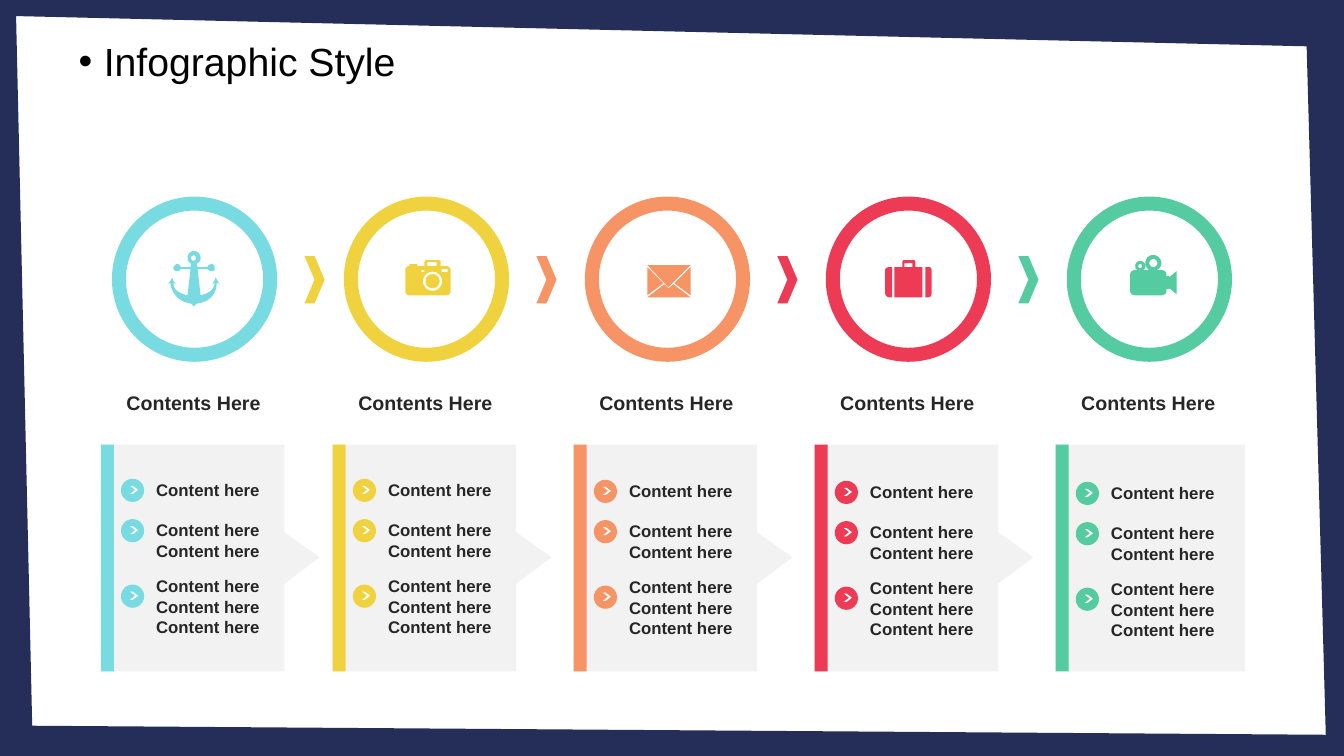
from math import cos, pi, sin

from lxml import etree
from pptx import Presentation
from pptx.dml.color import RGBColor
from pptx.enum.shapes import MSO_SHAPE
from pptx.enum.text import MSO_ANCHOR, MSO_AUTO_SIZE, PP_ALIGN
from pptx.oxml.ns import qn
from pptx.util import Inches, Pt

OVAL, RECT, ARROW = MSO_SHAPE.OVAL, MSO_SHAPE.RECTANGLE, MSO_SHAPE.CHEVRON
LEFT, CENTER, MIDDLE = PP_ALIGN.LEFT, PP_ALIGN.CENTER, MSO_ANCHOR.MIDDLE
FIT, FIXED = MSO_AUTO_SIZE.SHAPE_TO_FIT_TEXT, MSO_AUTO_SIZE.NONE

FONT, INK, PALE, WHITE, NAVY = "Arial", "262626", "F2F2F2", "FFFFFF", "252E58"
NEEDS = {"M": 2, "L": 2, "C": 6, "O": 3}

FRAME = "M 0 0 L 1333 0 1333 750 0 750 M 16 16 L 32 720 1315 729 1296 46"
PANEL = "M 0 0 L 182 0 182 87 217 112 182 138 182 225 0 225"
ANCHOR = """O 26 7 2.6 M 26 0 C 30 0 33 3 33 7 33 9 32 11 30 12 L 29 13 30 16 40 16 40 15
C 41 14 42 13 44 13 46 13 47 15 47 17 47 19 46 20 44 20 42 20 41 19 40 18 L 30 18 33 44
C 41 42 46 39 47 32 46 32 45 32 44 33 46 31 47 29 48 26 49 29 51 31 52 33
52 32 50 32 49 32 49 42 42 51 30 52 28 53 27 54 26 55 25 54 25 53 23 52
12 51 4 42 3 32 2 32 1 32 0 33 2 31 4 29 5 26 5 29 7 31 9 33 8 32 7 32 6 32
6 39 12 42 20 44 L 23 18 13 18 C 13 19 11 20 10 20 8 20 6 19 6 17 6 15 8 13 10 13
11 13 13 14 13 15 L 13 16 23 16 23 12 C 21 11 20 9 20 7 20 3 23 0 26 0"""
CAMERA = """O 27 21 7 O 27 21 9.5 M 16 10 L 16 12 19 12 19 10 M 36 9 L 36 12 42 12 42 9
M 22 2 L 22 6 31 6 31 2 M 20 0 L 33 0 C 34 0 35 1 35 2 L 35 6 41 6
C 43 6 45 8 45 10 L 45 31 C 45 33 43 35 41 35 L 3 35 C 2 35 0 33 0 31 L 0 10
C 0 8 2 6 3 6 L 4 6 4 5 C 4 4 5 4 5 4 L 11 4 C 12 4 12 4 12 5 L 12 6 19 6 19 2
C 19 1 20 0 20 0"""
LETTER = """M 26 19 L 43 32 0 32 17 19 21 23 M 43 2 L 43 30 27 18
M 0 2 L 16 18 0 30 M 0 0 L 43 0 21 22"""
CASE = """M 40 7 L 43 7 C 45 7 46 8 46 10 L 46 33 C 46 35 45 37 43 37 L 40 37
M 4 7 L 7 7 7 37 4 37 C 2 37 0 35 0 33 L 0 10 C 0 8 2 7 4 7
M 21 3 C 20 3 19 3 19 4 L 19 7 27 7 27 4 C 27 3 27 3 26 3
M 19 0 L 28 0 C 29 0 30 1 30 2 L 30 7 37 7 37 37 9 37 9 7 17 7 17 2 C 17 1 18 0 19 0"""
FILM = """O 10 11 2 O 23 8 4 M 23 0 C 27 0 31 4 31 8 31 11 29 14 26 15 L 31 15
C 34 15 36 17 36 19 L 36 21 38 21 C 38 21 39 21 39 22 L 46 16 46 39 39 33
C 39 34 38 34 38 34 L 36 34 36 36 C 36 38 34 40 31 40 L 5 40 C 2 40 0 38 0 36 L 0 19
C 0 17 2 15 5 15 L 8 15 C 6 15 5 13 5 11 5 8 7 6 10 6 13 6 15 8 15 11 15 13 14 15 12 15
L 19 15 C 17 14 15 11 15 8 15 4 18 0 23 0"""

STEPS = [
    ("77DBE1", ANCHOR, 6.6, 24.9),
    ("F0D23F", CAMERA, 7.2, 25.8),
    ("F79465", LETTER, 7.3, 26.3),
    ("ED3B55", CASE, 7, 25.8),
    ("54CBA0", FILM, 7.4, 25.3),
]
ITEMS = [(1, 47.1, 3, 47.5), (2, 51.1, 5, 51.5), (3, 56.6, 7.1, 58)]


def shade(code):
    return RGBColor.from_string(code)


def cell(count):
    return Inches(count / 10)


def bend(start, nums, parts=6):
    a, b, c = zip(nums[::2], nums[1::2])
    for k in range(1, parts + 1):
        t = k / parts
        u = 1 - t
        yield tuple(u**3 * s + 3 * u * u * t * p + 3 * u * t * t * q + t**3 * r
                    for s, p, q, r in zip(start, a, b, c))


def loops(text):
    rings, mode, nums = [], "", []
    for word in text.split():
        if word in NEEDS:
            mode = word
            continue
        nums.append(float(word))
        if len(nums) < NEEDS[mode]:
            continue
        if mode == "M":
            rings.append([tuple(nums)])
        elif mode == "L":
            rings[-1].append(tuple(nums))
        elif mode == "C":
            rings[-1].extend(bend(rings[-1][-1], nums))
        else:
            x, y, r = nums
            rings.append([(x + r * cos(k * pi / 16), y + r * sin(k * pi / 16))
                          for k in range(32)])
        nums = []
    return rings


class Deck:
    """Draws styled elements on a grid of ten cells to the inch."""

    def __init__(self):
        self.file = Presentation()
        self.file.slide_width, self.file.slide_height = Inches(13.33), Inches(7.5)
        self.slide = self.file.slides.add_slide(self.file.slide_layouts[1])
        self.shapes = self.slide.shapes

    def paint(self, shape, fill, line=None):
        shape.shadow.inherit = False
        shape.fill.solid()
        shape.fill.fore_color.rgb = shade(fill)
        if line:
            shape.line.color.rgb = shade(line)
            shape.line.width = Pt(10)
        else:
            shape.line.fill.background()

    def shape(self, kind, x, y, w, h, fill, line=None, bend=None):
        item = self.shapes.add_shape(kind, cell(x), cell(y), cell(w), cell(h))
        if bend:
            item.adjustments[0] = bend
        self.paint(item, fill, line)

    def trace(self, x, y, text, fill):
        rings = [[(cell(x + a / 10), cell(y + b / 10)) for a, b in ring]
                 for ring in loops(text)]
        pen = self.shapes.build_freeform(*rings[0][0], scale=1.0)
        for k, ring in enumerate(rings):
            if k:
                pen.move_to(*ring[0])
            pen.add_line_segments(ring[1:], close=True)
        self.paint(pen.convert_to_shape(), fill)

    def run(self, para, text, size, color, bold):
        font = para.add_run()
        font.text = text
        font = font.font
        font.name, font.size, font.bold = FONT, Pt(size), bold
        font.color.rgb = shade(color)

    def text(self, x, y, w, h, lines, size, align=LEFT):
        frame = self.shapes.add_textbox(cell(x), cell(y), cell(w), cell(h)).text_frame
        frame.word_wrap, frame.auto_size, frame.vertical_anchor = True, FIT, MIDDLE
        for k, line in enumerate(lines):
            para = frame.add_paragraph() if k else frame.paragraphs[0]
            para.alignment = align
            self.run(para, line, size, INK, True)

    def head(self, text):
        title = self.shapes.title.element
        title.getparent().remove(title)
        body = self.slide.placeholders[1]
        body.left, body.top, body.width, body.height = map(cell, (6.8, 3.7, 126.6, 7.9))
        body.text_frame.auto_size = FIXED
        para = body.text_frame.paragraphs[0]
        para.line_spacing, para.space_before = 0.9, Pt(10)
        self.run(para, text, 28, "000000", False)
        props = para._p.get_or_add_pPr()
        props.set("marL", str(cell(2.5)))
        props.set("indent", str(-cell(2.5)))
        etree.SubElement(props, qn("a:buFont")).set("typeface", FONT)
        etree.SubElement(props, qn("a:buChar")).set("char", "•")


def main():
    deck = Deck()
    deck.trace(0, 0, FRAME, NAVY)
    deck.head("Infographic Style")
    last = len(STEPS) - 1
    for i, (color, icon, dx, top) in enumerate(STEPS):
        x = 33 + 23.9 * (i - 1) if i else 10
        drop = max(0, i - 1) / 10
        deck.shape(OVAL, x + 1.8, 20.2, 15, 15, WHITE, color)
        deck.trace(x + dx, top, icon, color)
        deck.text(x, 38.2, 18.4, 3.4, ["Contents Here"], 14, CENTER)
        if i < last:
            deck.shape(ARROW, x + 20.2, 25.4, 2, 4.7, STEPS[i + 1][0])
            deck.trace(x, 44.1, PANEL, PALE)
        else:
            deck.shape(RECT, x, 44.1, 18.8, 22.5, PALE)
        deck.shape(RECT, x, 44.1, 1.3, 22.5, color)
        for count, y, high, dot in ITEMS:
            deck.shape(OVAL, x + 2, dot + drop, 2.3, 2.3, color)
            deck.shape(ARROW, x + 2.9, dot + 0.7 + drop, 0.8, 0.8, WHITE, bend=0.65)
            deck.text(x + 4.5, y + drop, 13.8, high, ["Content here"] * count, 12)
    deck.file.save("out.pptx")


if __name__ == "__main__":
    main()
